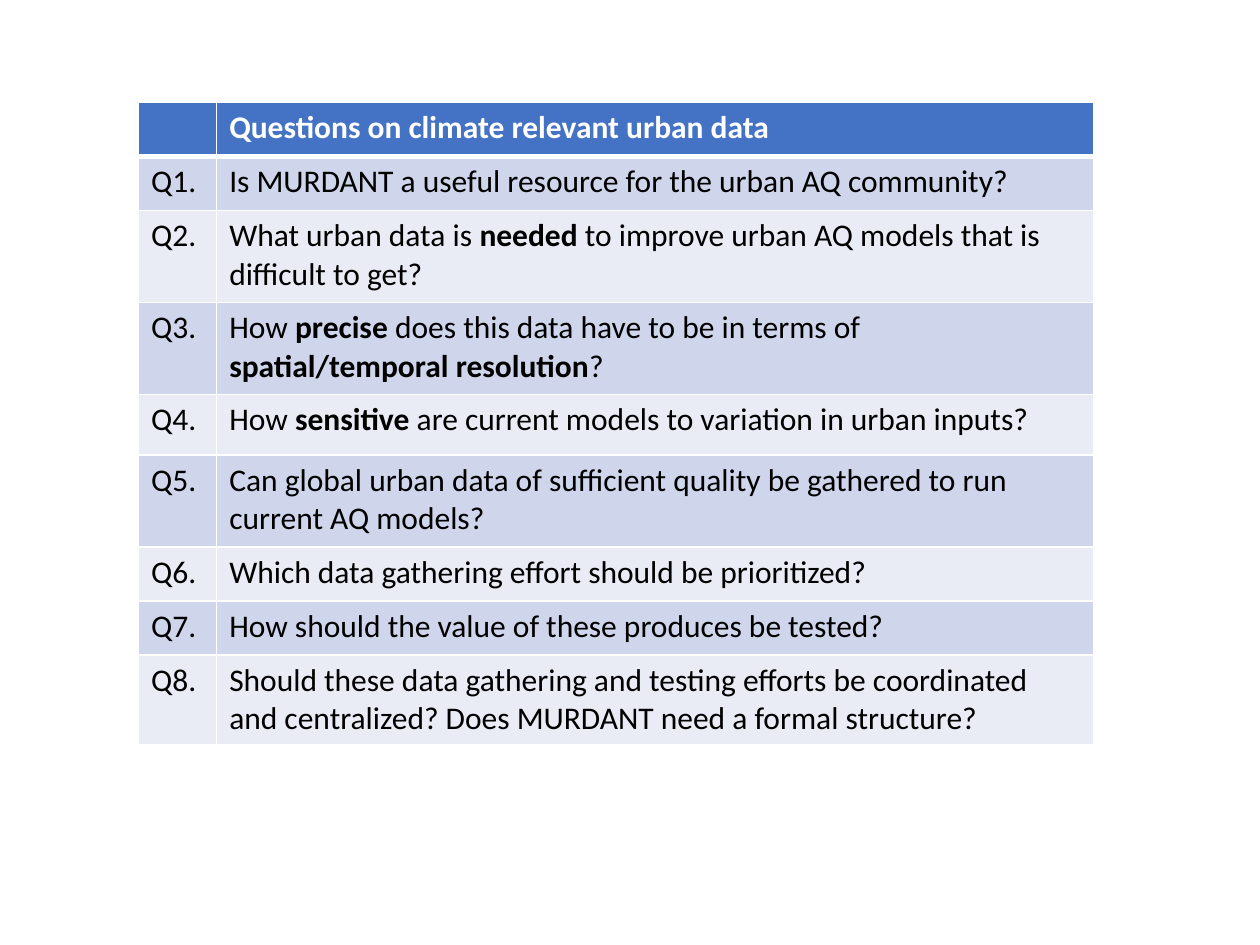
from dataclasses import dataclass

from lxml import etree
from pptx import Presentation
from pptx.dml.color import RGBColor
from pptx.oxml import ns
from pptx.util import Inches, Pt

WHITE = RGBColor(0xFF, 0xFF, 0xFF)
BLACK = RGBColor(0, 0, 0)
BLUE = RGBColor(0x44, 0x72, 0xC4)
BANDS = (RGBColor(0xCF, 0xD5, 0xEA), RGBColor(0xE9, 0xEB, 0xF5))

FONT = "Calibri"
SIZE = Pt(18)
THIN, THICK = Pt(1), Pt(3)
COLS = (0.62, 6.96)


@dataclass(frozen=True)
class Row:
    high: float
    runs: tuple[str, ...]  # plain and bold runs take turns, plain first


HEAD = Row(0.43, ("", "Questions on climate relevant urban data"))
ASKS = (
    Row(0.43, ("Is MURDANT a useful resource for the urban AQ community?",)),
    Row(0.73, ("What urban data is ", "needed",
               " to improve urban AQ models that is difficult to get?")),
    Row(0.73, ("How ", "precise", " does this data have to be in terms of ",
               "spatial/temporal resolution", "?")),
    Row(0.48, ("How ", "sensitive",
               " are current models to variation in urban inputs?")),
    Row(0.73, ("Can global urban data of sufficient quality be gathered "
               "to run current AQ models?",)),
    Row(0.43, ("Which data gathering effort should be prioritized?",)),
    Row(0.43, ("How should the value of these produces be tested?",)),
    Row(0.7, ("Should these data gathering and testing efforts be coordinated "
              "and centralized? Does MURDANT need a formal structure?",)),
)


def edge(cell, side: str, width: int) -> None:
    """Add a white border to one side of a cell."""
    props = cell._tc.get_or_add_tcPr()
    line = etree.SubElement(props, ns.qn(f"a:ln{side}"), w=str(width))
    fill = etree.SubElement(line, ns.qn("a:solidFill"))
    etree.SubElement(fill, ns.qn("a:srgbClr"), val=str(WHITE))


def write(cell, runs: tuple[str, ...], ink: RGBColor) -> None:
    """Fill a cell with runs, every second one bold."""
    para = cell.text_frame.paragraphs[0]
    para.font.size = SIZE
    for i, words in enumerate(runs):
        if not words:
            continue
        run = para.add_run()
        run.text = words
        run.font.name = FONT
        run.font.size = SIZE
        run.font.bold = i % 2 == 1
        run.font.color.rgb = ink


def draw(table, num: int, row: Row) -> None:
    """Draw one table row; row 0 is the header."""
    table.rows[num].height = Inches(row.high)
    shade = BANDS[(num - 1) % 2] if num else BLUE
    label = (f"Q{num}.",) if num else ()
    for cell, runs in zip(table.rows[num].cells, (label, row.runs)):
        edge(cell, "L", THIN)
        edge(cell, "R", THIN)
        edge(cell, "T", THICK if num == 1 else THIN)
        edge(cell, "B", THICK if num == 0 else THIN)
        cell.fill.solid()
        cell.fill.fore_color.rgb = shade
        write(cell, runs, BLACK if num else WHITE)


def main() -> None:
    deck = Presentation()
    deck.slide_width, deck.slide_height = Inches(10), Inches(7.5)
    slide = deck.slides.add_slide(deck.slide_layouts[6])

    # Question table
    rows = (HEAD, *ASKS)
    frame = slide.shapes.add_table(
        len(rows), len(COLS), Inches(1.1), Inches(0.81),
        Inches(sum(COLS)), Inches(sum(row.high for row in rows)))
    table = frame.table
    for col, wide in zip(table.columns, COLS):
        col.width = Inches(wide)
    for num, row in enumerate(rows):
        draw(table, num, row)

    deck.save("out.pptx")


if __name__ == "__main__":
    main()
